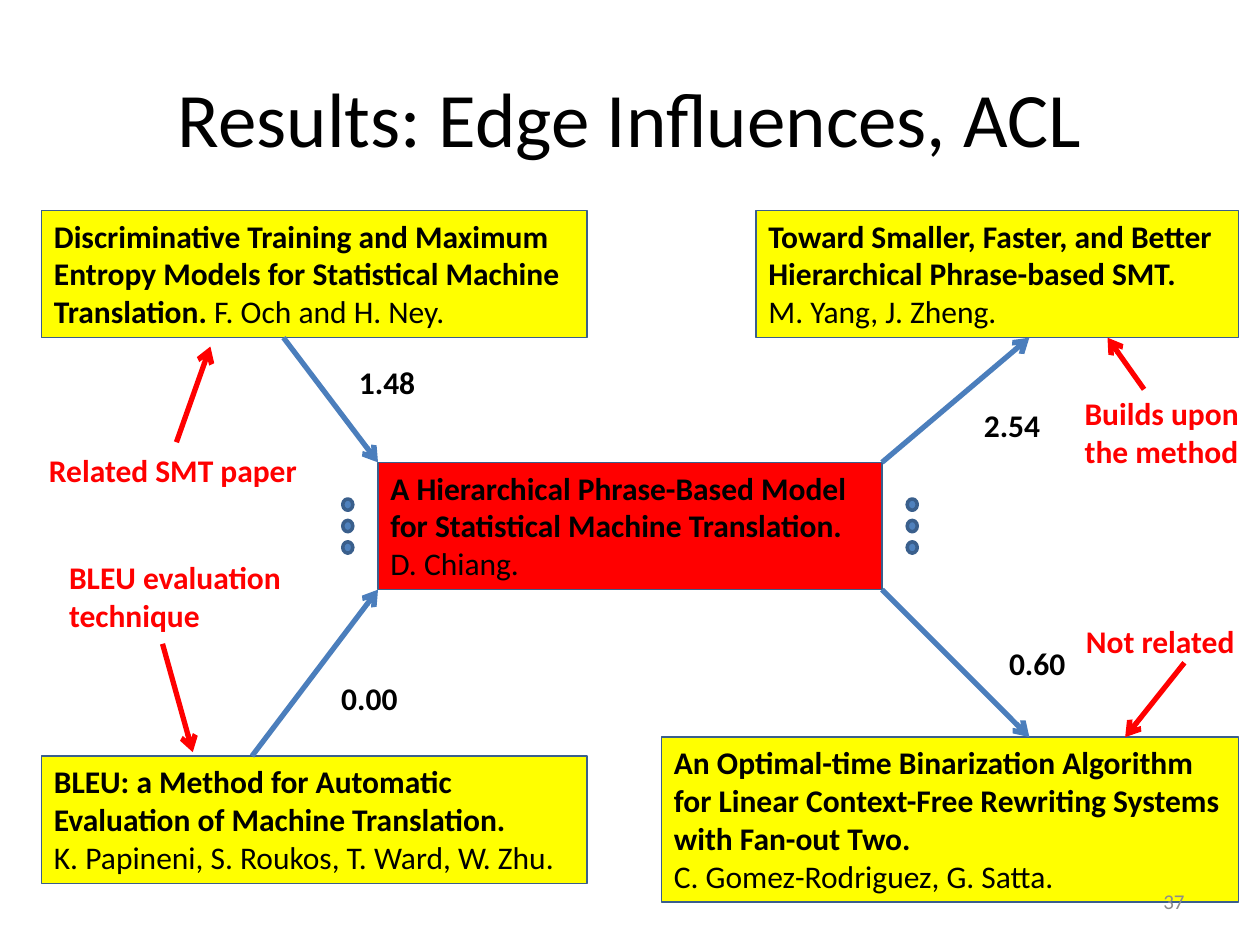
from pptx import Presentation
from pptx import util as u
from pptx.dml.color import RGBColor
from pptx.enum import shapes, text
from pptx.oxml import ns
from lxml import etree

PX = 9144
YELLOW, RED, BLACK, GREY = "FFFF00", "FF0000", "000000", "8C8C8C"
EDGE_BLUE, DOT_BLUE, OUTLINE = "4B7EBC", "4F81BD", "3A5F8C"


def px(*lengths):
    return [u.Emu(length * PX) for length in lengths]


def color(hex_code):
    return RGBColor.from_string(hex_code)


def style(run, size=18, hex_code=BLACK, bold=False):
    run.font.name = "Calibri"
    run.font.size = u.Pt(size)
    run.font.bold = bold
    run.font.color.rgb = color(hex_code)


def add_title(slide, box, wording):
    title = slide.shapes.title
    title.left, title.top, title.width, title.height = px(*box)
    frame = title.text_frame
    frame.text = wording
    frame.vertical_anchor = text.MSO_ANCHOR.MIDDLE
    frame.paragraphs[0].alignment = text.PP_ALIGN.CENTER
    style(frame.paragraphs[0].runs[0], 44)


def add_filled(slide, kind, box, fill, line_width):
    shape = slide.shapes.add_shape(kind, *px(*box))
    shape.shadow.inherit = False
    shape.fill.solid()
    shape.fill.fore_color.rgb = color(fill)
    shape.line.color.rgb = color(OUTLINE)
    shape.line.width = u.Pt(line_width)
    return shape


def add_paper(slide, box, name, authors, fill=YELLOW, same_line=False):
    paper = add_filled(slide, shapes.MSO_SHAPE.RECTANGLE, box, fill, 0.75)
    frame = paper.text_frame
    frame.word_wrap = True
    frame.vertical_anchor = text.MSO_ANCHOR.TOP
    frame.text = name
    name_line = frame.paragraphs[0]
    style(name_line.runs[0], bold=True)
    author_line = name_line if same_line else frame.add_paragraph()
    author_run = author_line.add_run()
    author_run.text = " " + authors if same_line else authors
    style(author_run)
    for paragraph in frame.paragraphs:
        paragraph.alignment = text.PP_ALIGN.LEFT


def add_label(slide, box, wording, hex_code=BLACK, size=18, bold=True,
              align=text.PP_ALIGN.LEFT, anchor=text.MSO_ANCHOR.TOP):
    frame = slide.shapes.add_textbox(*px(*box)).text_frame
    frame.word_wrap = True
    frame.vertical_anchor = anchor
    frame.text = wording
    for paragraph in frame.paragraphs:
        paragraph.alignment = align
        style(paragraph.runs[0], size, hex_code, bold)


def add_arrow(slide, ends, hex_code):
    arrow = slide.shapes.add_connector(shapes.MSO_CONNECTOR.STRAIGHT, *px(*ends))
    arrow.line.color.rgb = color(hex_code)
    arrow.line.width = u.Pt(3)
    etree.SubElement(arrow.line._get_or_add_ln(), ns.qn("a:tailEnd"), type="arrow")
    etree.SubElement(arrow._element.spPr, ns.qn("a:effectLst"))


def add_influence(slide, ends, box, value):
    add_arrow(slide, ends, EDGE_BLUE)
    add_label(slide, box, value)


def add_remark(slide, box, wording, ends):
    add_label(slide, box, wording, RED)
    add_arrow(slide, ends, RED)


def add_ellipsis(slide, left, top):
    pitch = 17
    for row in range(3):
        add_filled(slide, shapes.MSO_SHAPE.OVAL, (left, top + row * pitch, 8, 9), DOT_BLUE, 2)


def add_papers(slide):
    add_paper(slide, (525, 585, 458, 131),
              "An Optimal-time Binarization Algorithm for Linear Context-Free "
              "Rewriting Systems with Fan-out Two.",
              "C. Gomez-Rodriguez, G. Satta.")
    add_paper(slide, (300, 367, 400, 101),
              "A Hierarchical Phrase-Based Model for Statistical Machine Translation.",
              "D. Chiang.", fill=RED)
    add_paper(slide, (33, 167, 433, 101),
              "Discriminative Training and Maximum Entropy Models for Statistical "
              "Machine Translation.",
              "F. Och and H. Ney.", same_line=True)
    add_paper(slide, (33, 600, 433, 101),
              "BLEU: a Method for Automatic Evaluation of Machine Translation.",
              "K. Papineni, S. Roukos, T. Ward, W. Zhu.")
    add_paper(slide, (600, 167, 383, 101),
              "Toward Smaller, Faster, and Better Hierarchical Phrase-based SMT.",
              "M. Yang, J. Zheng.")


def add_influences(slide):
    for ends, corner, value in (
        ((225, 268, 300, 367), (275, 283), "1.48"),
        ((200, 600, 300, 468), (261, 534), "0.00"),
        ((700, 367, 817, 268), (771, 317), "2.54"),
        ((700, 468, 817, 585), (791, 506), "0.60"),
    ):
        add_influence(slide, ends, (*corner, 108, 40), value)
    for left in (272, 720):
        add_ellipsis(slide, left, 396)


def add_remarks(slide):
    for box, wording, ends in (
        ((29, 353, 221, 40), "Related SMT paper", (140, 351, 167, 275)),
        ((45, 438, 189, 71), "BLEU evaluation\ntechnique", (129, 511, 153, 597)),
        ((851, 308, 148, 71), "Builds upon\nthe method", (908, 309, 879, 268)),
        ((852, 489, 154, 40), "Not related", (940, 526, 893, 585)),
    ):
        add_remark(slide, box, wording, ends)


def main():
    deck = Presentation()
    deck.slide_width, deck.slide_height = px(1000, 750)
    slide = deck.slides.add_slide(deck.slide_layouts[5])
    add_title(slide, (50, 30, 900, 125), "Results: Edge Influences, ACL")
    add_papers(slide)
    add_influences(slide)
    add_remarks(slide)
    add_label(slide, (717, 695, 233, 40), "37", GREY, 12, False,
              text.PP_ALIGN.RIGHT, text.MSO_ANCHOR.MIDDLE)
    deck.save("out.pptx")


if __name__ == "__main__":
    main()
